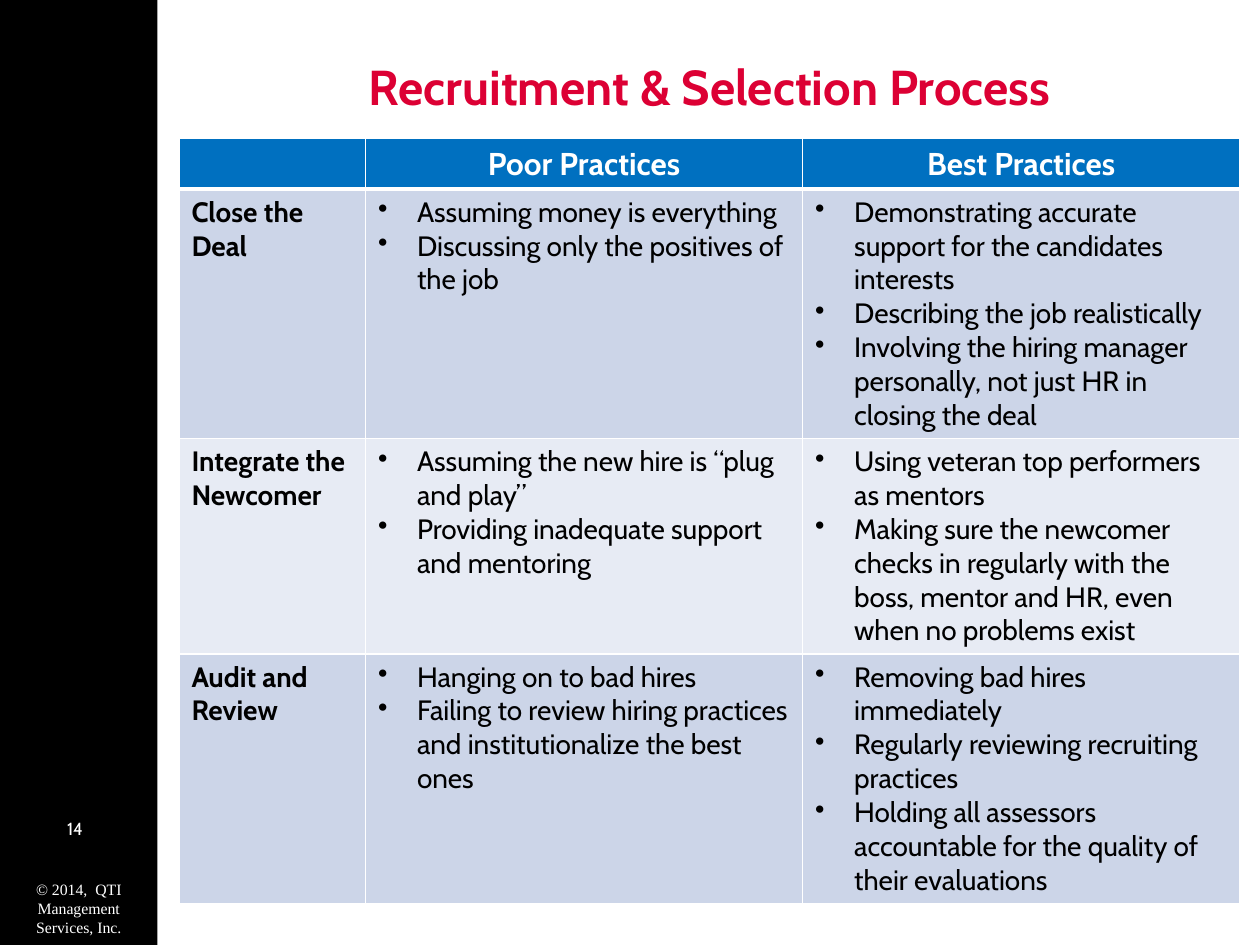
import pptx
import pptx.dml.color
import pptx.enum.shapes
import pptx.enum.text
import pptx.oxml.xmlchemy
from lxml import etree
from pptx.oxml.ns import qn
from pptx.util import Inches, Pt

TITLE = "Recruitment & Selection Process"
PAGE_NUMBER = "14"
COPYRIGHT = "© 2014,  QTI Management Services, Inc."
HEADERS = ["", "Poor Practices", "Best Practices"]
STAGES = [
    ("Close the Deal",
     ["Assuming money is everything",
      "Discussing only the positives of the job"],
     ["Demonstrating accurate support for the candidates interests",
      "Describing the job realistically",
      "Involving the hiring manager personally, not just HR in closing the deal"]),
    ("Integrate the Newcomer",
     ["Assuming the new hire is “plug and play”",
      "Providing inadequate support and mentoring"],
     ["Using veteran top performers as mentors",
      "Making sure the newcomer checks in regularly with the boss, mentor and HR, "
      "even when no problems exist"]),
    ("Audit and Review",
     ["Hanging on to bad hires",
      "Failing to review hiring practices and institutionalize the best ones"],
     ["Removing bad hires immediately",
      "Regularly reviewing recruiting practices",
      "Holding all assessors accountable for the quality of their evaluations"]),
]

COLUMN_WIDTHS = [1.48, 3.47, 3.47]
ROW_HEIGHTS = [0.39, 1.98, 1.71, 1.98]
TABLE_LEFT, TABLE_TOP, TABLE_WIDTH = 1.42, 1.1, sum(COLUMN_WIDTHS)
SIDEBAR_WIDTH = 1.25
BULLET_INDENT = 0.31

BLACK, WHITE, RED, BLUE = "000000", "FFFFFF", "DC0034", "0070C0"
BANDS = ["CCD5E8", "E7EBF4"]
CENTER = pptx.enum.text.PP_ALIGN.CENTER
LEFT = pptx.enum.text.PP_ALIGN.LEFT


def rgb(color):
    return pptx.dml.color.RGBColor.from_string(color)


def write(frame, lines, size, color, bold=False, align=LEFT, font="Cabin", bullets=False):
    """Fill a text frame with one paragraph for each line."""
    for index, line in enumerate(lines):
        paragraph = frame.paragraphs[0] if index == 0 else frame.add_paragraph()
        paragraph.alignment = align
        if bullets:
            properties = paragraph._p.get_or_add_pPr()
            properties.set("marL", str(Inches(BULLET_INDENT)))
            properties.set("indent", str(-Inches(BULLET_INDENT)))
            etree.SubElement(properties, qn("a:buChar"), char="•")
        run = paragraph.add_run()
        run.text = line
        run.font.name = font
        run.font.size = Pt(size)
        run.font.bold = bold
        run.font.color.rgb = rgb(color)


def add_text(slide, box, text, size, color, **style):
    shape = slide.shapes.add_textbox(*map(Inches, box))
    frame = shape.text_frame
    frame.word_wrap = True
    frame.vertical_anchor = pptx.enum.text.MSO_ANCHOR.MIDDLE
    write(frame, [text], size, color, align=CENTER, **style)


def style_cell(cell, color, top=1, bottom=1):
    """Give a cell white borders, widths in points, and a solid fill."""
    properties = cell._tc.get_or_add_tcPr()
    for side, width in (("L", 1), ("R", 1), ("T", top), ("B", bottom)):
        line = etree.SubElement(properties, qn(f"a:ln{side}"), w=str(Pt(width)))
        fill = etree.SubElement(line, qn("a:solidFill"))
        etree.SubElement(fill, qn("a:srgbClr"), val=WHITE)
    cell.fill.solid()
    cell.fill.fore_color.rgb = rgb(color)


def add_practices_table(slide):
    table = slide.shapes.add_table(
        len(ROW_HEIGHTS), len(COLUMN_WIDTHS), Inches(TABLE_LEFT), Inches(TABLE_TOP),
        Inches(TABLE_WIDTH), Inches(sum(ROW_HEIGHTS))).table
    for column, width in zip(table.columns, COLUMN_WIDTHS):
        column.width = Inches(width)
    for row, height in zip(table.rows, ROW_HEIGHTS):
        row.height = Inches(height)

    for column, header in enumerate(HEADERS):
        cell = table.cell(0, column)
        style_cell(cell, BLUE, bottom=3)
        if header:
            write(cell.text_frame, [header], 18, WHITE, bold=True, align=CENTER)
    for row, (stage, *practices) in enumerate(STAGES, start=1):
        for column, lines in enumerate([[stage], *practices]):
            cell = table.cell(row, column)
            style_cell(cell, BANDS[(row - 1) % 2], top=3 if row == 1 else 1)
            write(cell.text_frame, lines, 16, BLACK, bold=column == 0, bullets=column > 0)


def main():
    presentation = pptx.Presentation()
    presentation.slide_width, presentation.slide_height = Inches(10), Inches(7.5)
    slide = presentation.slides.add_slide(presentation.slide_layouts[6])

    sidebar = slide.shapes.add_shape(
        pptx.enum.shapes.MSO_SHAPE.RECTANGLE, 0, 0,
        Inches(SIDEBAR_WIDTH), presentation.slide_height)
    sidebar.shadow.inherit = False
    sidebar.fill.solid()
    sidebar.fill.fore_color.rgb = rgb(BLACK)
    sidebar.line.fill.background()

    add_text(slide, (-0.03, 6.41, SIDEBAR_WIDTH, 0.33), PAGE_NUMBER, 10, WHITE)
    add_text(slide, (0, 6.93, SIDEBAR_WIDTH, 0.56), COPYRIGHT, 9, WHITE,
             font="Times New Roman")
    add_text(slide, (TABLE_LEFT, 0.25, TABLE_WIDTH, 0.87), TITLE, 28, RED, bold=True)
    add_practices_table(slide)
    presentation.save("out.pptx")


if __name__ == "__main__":
    main()
